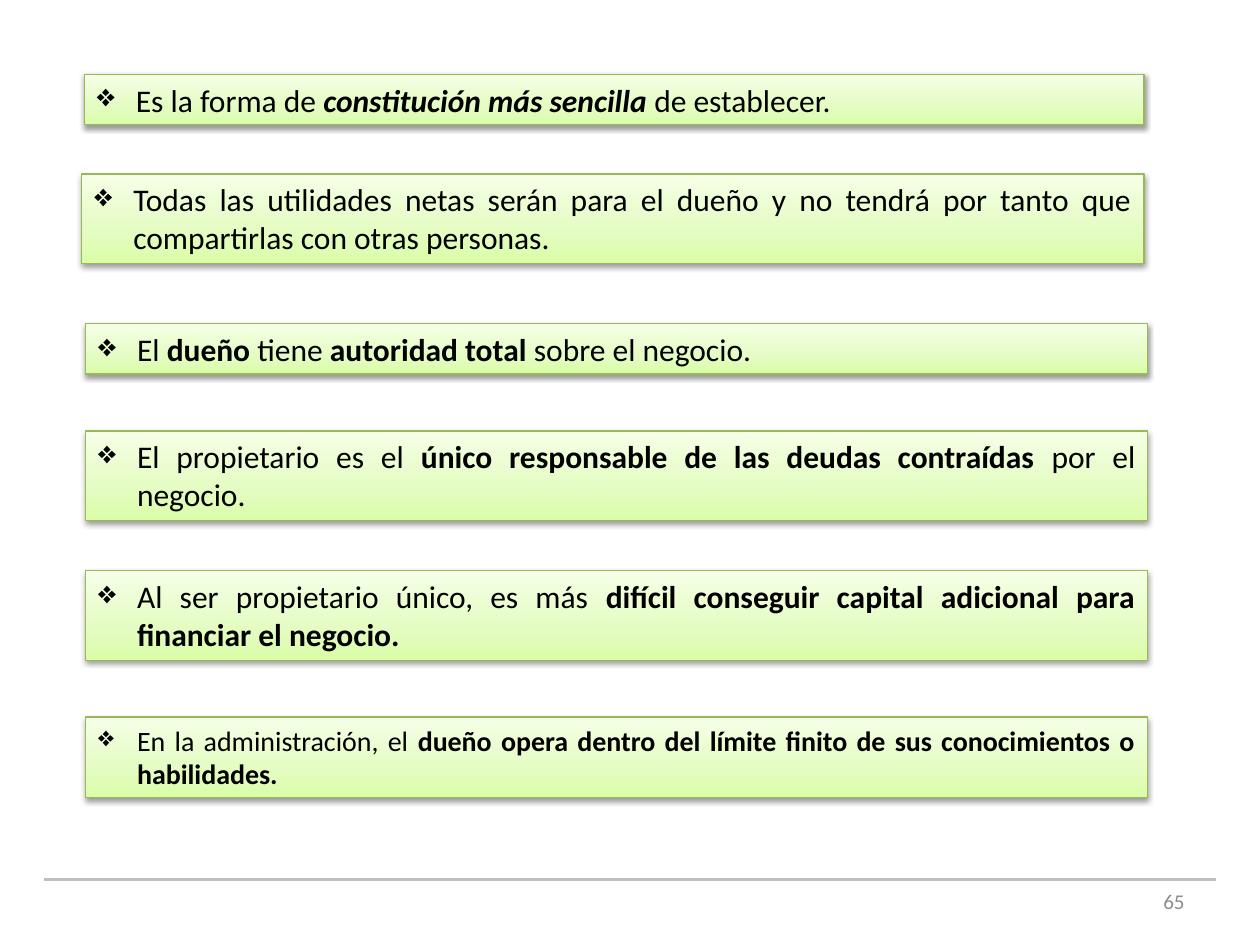
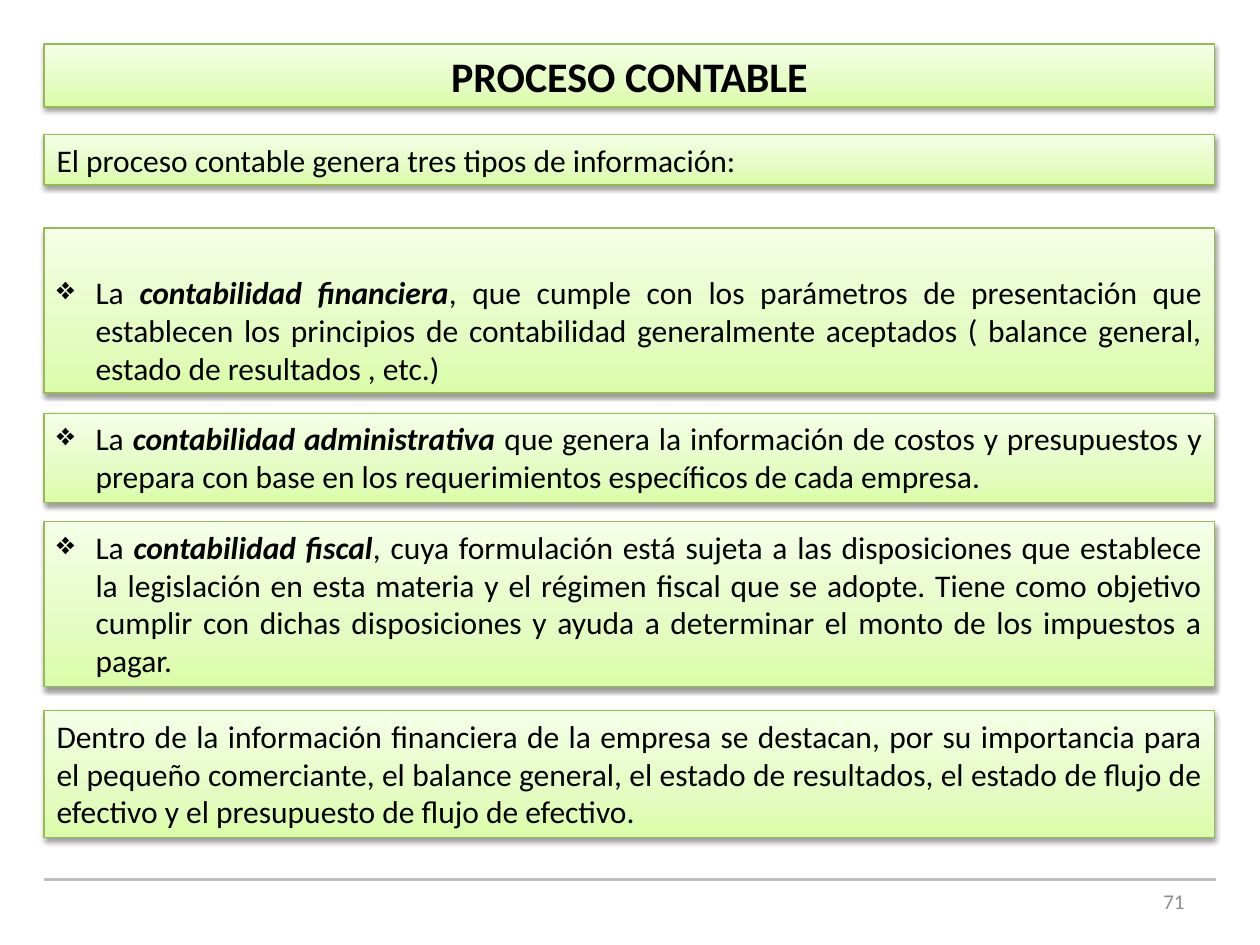
from copy import deepcopy

from lxml.etree import SubElement
from pptx import Presentation
from pptx.dml.color import RGBColor as Rgb
from pptx.enum.shapes import MSO_CONNECTOR as Conn, MSO_SHAPE as Kind
from pptx.enum.text import MSO_ANCHOR as Anchor, PP_ALIGN as Align
from pptx.oxml.ns import qn
from pptx.util import Inches, Pt

FONT = "Calibri"
HEX = {"text": "000000", "page": "8C8C8C", "rule": "BFBFBF", "edge": "98B955",
       "deep": "DAFDA7", "mid": "E4FCC2", "pale": "F5FFE7"}
STOPS = [(0, "deep"), (0.35, "mid"), (1, "pale")]


def color(name):
    return Rgb.from_string(HEX[name])


def write(frame, text, size=18, ink="text", align=Align.JUSTIFY,
          anchor=Anchor.TOP, bullet=False, italic=False):
    """Fill a frame; words between asterisks are bold, and italic if asked."""
    frame.word_wrap = True
    frame.vertical_anchor = anchor
    para = frame.paragraphs[0]
    para.alignment = align
    if bullet:
        props = para._p.get_or_add_pPr()
        props.set("marL", str(Inches(0.31)))
        props.set("indent", str(-Inches(0.31)))
        SubElement(props, qn("a:buChar")).set("char", "❖")
    for i, part in enumerate(text.split("*")):
        if part:
            run = para.add_run()
            run.text = part
            font = run.font
            font.name, font.size = FONT, Pt(size)
            font.color.rgb = color(ink)
            font.bold = i % 2 == 1
            font.italic = italic and font.bold


class Deck:
    def __init__(self):
        self.file = Presentation()
        self.file.slide_width = Inches(10)
        self.file.slide_height = Inches(7.5)

    def page(self, number):
        """Start a slide with its footer rule and number."""
        self.slide = self.file.slides.add_slide(self.file.slide_layouts[6])
        rule = self.slide.shapes.add_connector(
            Conn.STRAIGHT, Inches(0.35), Inches(6.98), Inches(9.65), Inches(6.98))
        rule.line.color.rgb = color("rule")
        rule.line.width = Pt(2)
        SubElement(rule._element.spPr, qn("a:effectLst"))
        box = self.slide.shapes.add_textbox(
            Inches(7.17), Inches(6.95), Inches(2.33), Inches(0.4))
        write(box.text_frame, number, size=12, ink="page",
              align=Align.RIGHT, anchor=Anchor.MIDDLE)

    def panel(self, left, top, width, height, text, **style):
        shape = self.slide.shapes.add_shape(
            Kind.RECTANGLE, Inches(left), Inches(top), Inches(width), Inches(height))
        self.shade(shape)
        shape.line.color.rgb = color("edge")
        shape.line.width = Pt(0.75)
        self.shadow(shape)
        write(shape.text_frame, text, **style)

    def shade(self, shape):
        """Fill with the green gradient, deepest at the bottom."""
        fill = shape.fill
        fill.gradient()
        fill.gradient_angle = 90
        stops = shape._element.spPr.find(".//" + qn("a:gsLst"))
        stops.append(deepcopy(stops[-1]))
        for stop, (place, name) in zip(fill.gradient_stops, STOPS):
            stop.position = place
            stop.color.rgb = color(name)

    def shadow(self, shape):
        shape.shadow.inherit = False
        effects = shape._element.spPr.find(qn("a:effectLst"))
        outer = SubElement(effects, qn("a:outerShdw"), blurRad=str(Pt(3.1)),
                           dist=str(Pt(1.6)), dir="5400000", rotWithShape="0")
        tint = SubElement(outer, qn("a:srgbClr"), val=HEX["text"])
        SubElement(tint, qn("a:alpha"), val="38000")


def traits(deck):
    deck.page("65")
    rows = [
        (0.67, 0.59, 8.41, 0.4, "Es la forma de *constitución más sencilla *de establecer.",
         {"italic": True}),
        (0.65, 1.38, 8.43, 0.71, "Todas las utilidades netas serán para el dueño y no "
         "tendrá por tanto que compartirlas con otras personas.", {}),
        (0.68, 2.57, 8.43, 0.4, "El *dueño* tiene *autoridad total *sobre el negocio.",
         {"align": Align.LEFT}),
        (0.68, 3.42, 8.43, 0.71, "El propietario es el *único responsable de las deudas "
         "contraídas *por el negocio.", {}),
        (0.68, 4.53, 8.43, 0.71, "Al ser propietario único, es más *difícil conseguir "
         "capital adicional para financiar el negocio.*", {}),
        (0.68, 5.69, 8.43, 0.64, "En la administración, el *dueño opera dentro del límite "
         "finito de sus conocimientos o habilidades.*", {"size": 16}),
    ]
    for left, top, width, height, text, style in rows:
        deck.panel(left, top, width, height, text, bullet=True, **style)


def process(deck):
    deck.page("71")
    item = {"bullet": True, "italic": True}
    rows = [
        (0.35, 0.5, "*PROCESO CONTABLE*", {"size": 24, "align": Align.CENTER}),
        (1.07, 0.4, "El proceso contable genera tres tipos de información:", {}),
        (1.81, 1.31, "La *contabilidad financiera*, que cumple con los parámetros de "
         "presentación que establecen los principios de contabilidad generalmente "
         "aceptados ( balance general, estado de resultados , etc.)",
         {**item, "anchor": Anchor.BOTTOM}),
        (3.28, 0.71, "La *contabilidad administrativa *que genera la información de costos "
         "y presupuestos y prepara con base en los requerimientos específicos de cada "
         "empresa.", item),
        (4.14, 1.31, "La *contabilidad fiscal*, cuya formulación está sujeta a las "
         "disposiciones que establece la legislación en esta materia y el régimen fiscal "
         "que se adopte. Tiene como objetivo cumplir con dichas disposiciones y ayuda a "
         "determinar el monto de los impuestos a pagar.", item),
        (5.64, 1.01, "Dentro de la información financiera de la empresa se destacan, por "
         "su importancia para el pequeño comerciante, el balance general, el estado de "
         "resultados, el estado de flujo de efectivo y el presupuesto de flujo de "
         "efectivo.", {}),
    ]
    for top, height, text, style in rows:
        deck.panel(0.35, top, 9.29, height, text, **style)


def main():
    deck = Deck()
    traits(deck)
    process(deck)
    deck.file.save("out.pptx")


if __name__ == "__main__":
    main()
